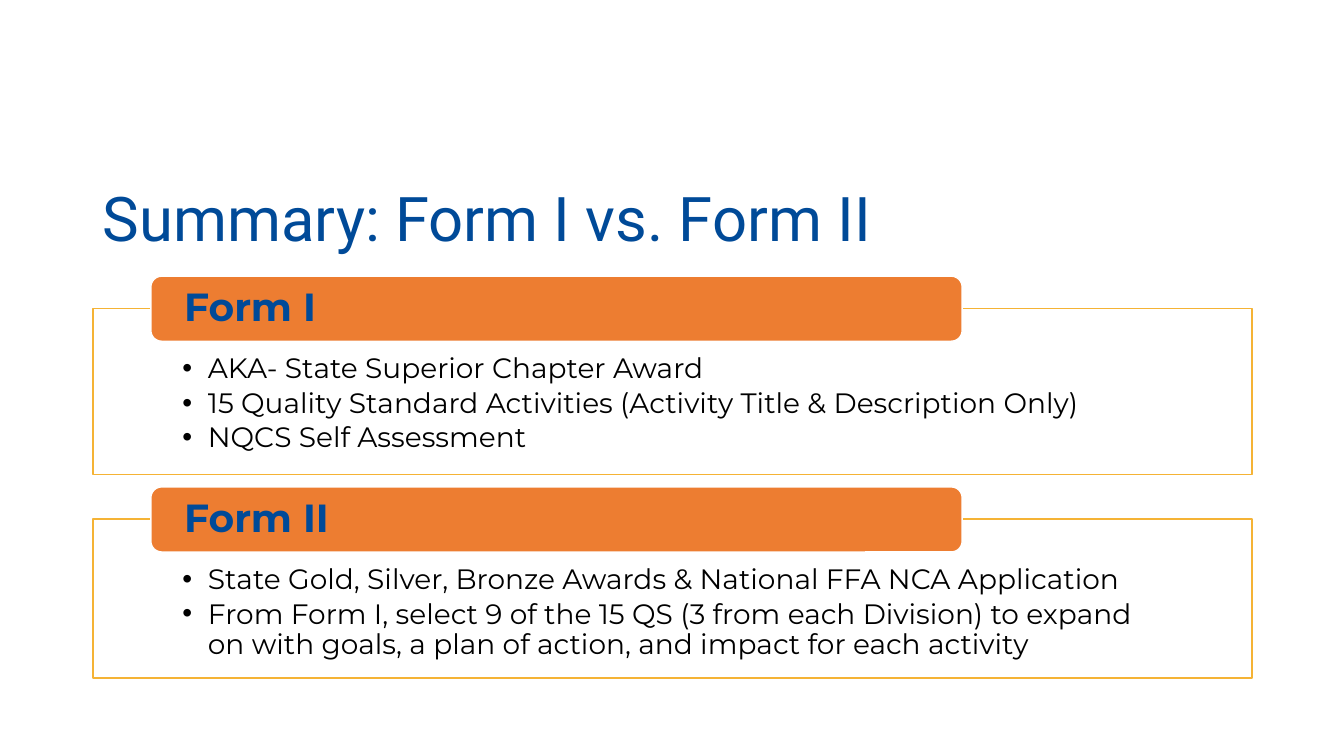
from lxml import etree
from pptx import Presentation
from pptx import util as u
from pptx.dml.color import RGBColor
from pptx.enum import shapes, text
from pptx.oxml.ns import qn

BLUE = RGBColor(0x00, 0x4A, 0x98)
ORANGE = RGBColor(0xED, 0x7D, 0x31)
GOLD = RGBColor(0xF5, 0xB3, 0x35)
WHITE = RGBColor(0xFF, 0xFF, 0xFF)
BLACK = RGBColor(0x00, 0x00, 0x00)

LEFT, WIDTH = 2.34, 29.21
FORMS = [
    (7.77, 4.19, "Form I", [
        "AKA- State Superior Chapter Award",
        "15 Quality Standard Activities (Activity Title & Description Only)",
        "NQCS Self Assessment",
    ]),
    (13.08, 4.01, "Form II", [
        "State Gold, Silver, Bronze Awards & National FFA NCA Application",
        "From Form I, select 9 of the 15 QS (3 from each Division) to expand on "
        "with goals, a plan of action, and impact for each activity",
    ]),
]


def set_frame(box, anchor, insets=None):
    frame = box.text_frame
    frame.word_wrap = True
    frame.vertical_anchor = anchor
    if insets:
        (frame.margin_left, frame.margin_top,
         frame.margin_right, frame.margin_bottom) = map(u.Cm, insets)
    return frame


def style_para(para, font, size, color, bold=False):
    para.alignment = text.PP_ALIGN.LEFT
    para.line_spacing = 0.9
    para.font.name = font
    para.font.size = u.Pt(size)
    para.font.color.rgb = color
    para.font.bold = bold


def add_bullet(para):
    properties = para._p.get_or_add_pPr()
    properties.set("marL", str(u.Cm(0.64)))
    properties.set("indent", str(-u.Cm(0.64)))
    etree.SubElement(properties, qn("a:buFont"), typeface="Arial")
    etree.SubElement(properties, qn("a:buChar"), char="•")


def add_panel(page, kind, left, top, width, height, fill, line):
    panel = page.shapes.add_shape(
        kind, u.Cm(left), u.Cm(top), u.Cm(width), u.Cm(height))
    panel.shadow.inherit = False
    panel.fill.solid()
    panel.fill.fore_color.rgb = fill
    panel.line.color.rgb = line
    panel.line.width = u.Pt(1)
    return panel


def add_title(page, left, top, width, height):
    box = page.shapes.add_textbox(
        u.Cm(left), u.Cm(top), u.Cm(width), u.Cm(height))
    para = set_frame(box, text.MSO_ANCHOR.MIDDLE).paragraphs[0]
    para.text = "Summary: Form I vs. Form II"
    style_para(para, "Roboto", 44, BLUE)


def add_form(page, left, top, width, height, heading, points):
    body = add_panel(page, shapes.MSO_SHAPE.RECTANGLE,
                     left, top, width, height, WHITE, GOLD)
    color = body.fill._xPr.find(qn("a:solidFill"))[0]
    etree.SubElement(color, qn("a:alpha"), val="90000")
    frame = set_frame(body, text.MSO_ANCHOR.TOP, (2.26, 1.17, 2.26, 0.41))
    frame.text = "\n".join(points)
    for para in frame.paragraphs:
        add_bullet(para)
        style_para(para, "Montserrat", 20, BLACK)
        para.space_after = u.Pt(3)

    tab = add_panel(page, shapes.MSO_SHAPE.ROUNDED_RECTANGLE,
                    left + 0.05 * width, top - 0.81, 0.7 * width, 1.64,
                    ORANGE, WHITE)
    para = set_frame(tab, text.MSO_ANCHOR.MIDDLE, (0.76, 0, 0.76, 0)).paragraphs[0]
    para.text = heading
    style_para(para, "Montserrat", 28, BLUE, bold=True)


def main():
    deck = Presentation()
    deck.slide_width, deck.slide_height = u.Cm(33.87), u.Cm(19.05)
    page = deck.slides.add_slide(deck.slide_layouts[6])
    add_title(page, LEFT, 4.47, WIDTH, 2.21)
    for top, height, heading, points in FORMS:
        add_form(page, LEFT, top, WIDTH, height, heading, points)
    deck.save("out.pptx")


if __name__ == "__main__":
    main()
